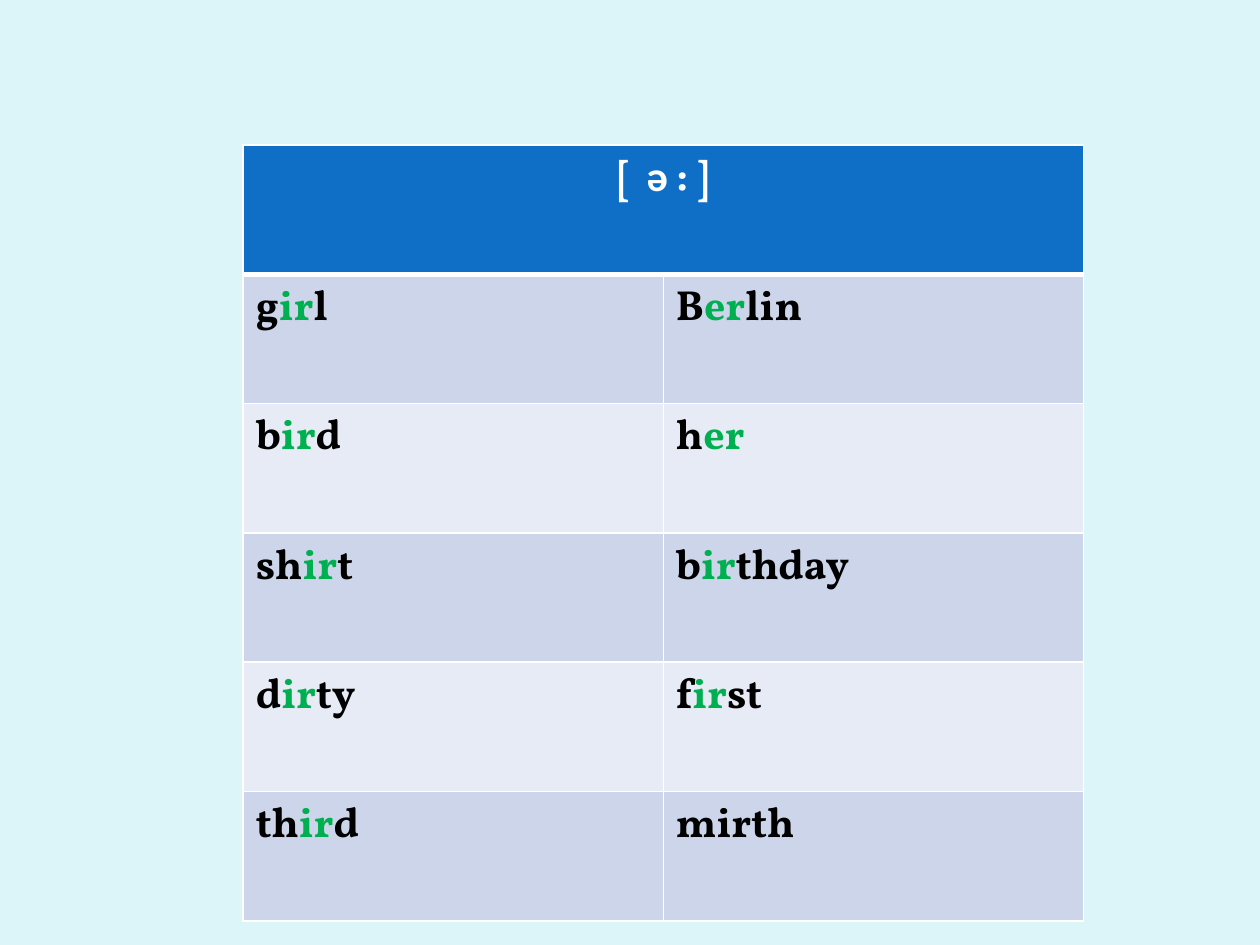
"""Build a slide with a table of words that share one vowel sound."""
from lxml.etree import SubElement
from pptx import Presentation
from pptx.dml.color import RGBColor as RGB
from pptx.enum.text import PP_ALIGN as Align
from pptx.oxml.ns import qn
from pptx.util import Inches, Pt

COLORS = {
    "background": "DBF5F9", "header": "0F6FC6", "odd": "CCD5EA", "even": "E7EBF5",
    "white": "FFFFFF", "text": "000000", "vowel": "00B050",
}
FONT, SOUND_FONT = "Vollkorn", "Calibri"
HEADER = [("[  ", FONT), ("ə", SOUND_FONT), (" : ]", FONT)]
WORDS = [
    (("g", "ir", "l"), ("B", "er", "lin")),
    (("b", "ir", "d"), ("h", "er")),
    (("sh", "ir", "t"), ("b", "ir", "thday")),
    (("d", "ir", "ty"), ("f", "ir", "st")),
    (("th", "ir", "d"), ("mirth",)),
]
LEFT, TOP, WIDTH, HEIGHT = 1.93, 1.15, 6.67, 6.16


def color(name):
    return RGB.from_string(COLORS[name])


def add_run(p, text, color_name, font=FONT):
    r = p.add_run()
    r.text = text
    r.font.name = font
    r.font.size = Pt(24)
    r.font.bold = True
    r.font.color.rgb = color(color_name)


def style_cell(cell, fill, top=1, bottom=1):
    tc_pr = cell._tc.get_or_add_tcPr()
    for side, width in (("L", 1), ("R", 1), ("T", top), ("B", bottom)):
        line = SubElement(tc_pr, qn(f"a:ln{side}"), w=str(Pt(width)))
        line_fill = SubElement(line, qn("a:solidFill"))
        SubElement(line_fill, qn("a:srgbClr"), val=COLORS["white"])
    cell.fill.solid()
    cell.fill.fore_color.rgb = color(fill)


def main():
    prs = Presentation()
    prs.slide_width, prs.slide_height = Inches(10), Inches(7.5)
    s = prs.slides.add_slide(prs.slide_layouts[6])
    s.background.fill.solid()
    s.background.fill.fore_color.rgb = color("background")

    table = s.shapes.add_table(len(WORDS) + 1, 2, Inches(LEFT), Inches(TOP),
                               Inches(WIDTH), Inches(HEIGHT)).table
    for cell in table.rows[0].cells:
        style_cell(cell, "header", bottom=3)
    header = table.cell(0, 0)
    header.merge(table.cell(0, 1))
    p = header.text_frame.paragraphs[0]
    p.alignment = Align.CENTER
    for text, font in HEADER:
        add_run(p, text, "white", font)

    for row, words in enumerate(WORDS, start=1):
        for col, parts in enumerate(words):
            cell = table.cell(row, col)
            style_cell(cell, "odd" if row % 2 else "even", top=3 if row == 1 else 1)
            p = cell.text_frame.paragraphs[0]
            for i, part in enumerate(parts):
                add_run(p, part, "vowel" if i == 1 else "text")

    prs.save("out.pptx")


if __name__ == "__main__":
    main()
